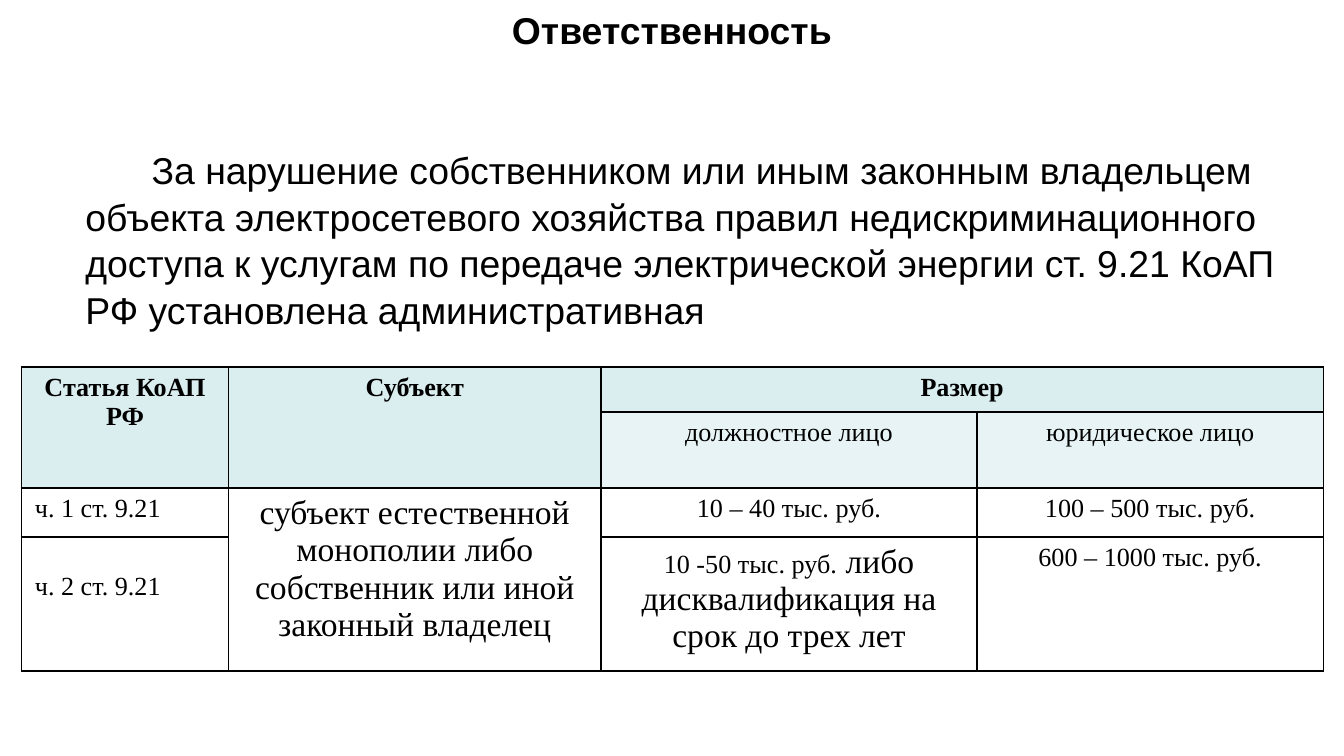
from lxml.etree import SubElement
from pptx import Presentation
from pptx.dml.color import RGBColor as RGB
from pptx.enum.text import MSO_ANCHOR, MSO_AUTO_SIZE, PP_ALIGN
from pptx.oxml.ns import qn
from pptx.util import Pt

TITLE = "Ответственность"
BODY = ("За нарушение собственником или иным законным владельцем объекта "
        "электросетевого хозяйства правил недискриминационного доступа к услугам "
        "по передаче электрической энергии ст. 9.21 КоАП РФ установлена "
        "административная")

THEME = {"sans": "Arial", "serif": "Times New Roman", "ink": "000000",
         "head": "DAEDEF", "subhead": "E7F3F4", "cell": "FFFFFF",
         "text": 20, "large": 18, "small": 14, "border": 1}

COLUMNS = [111, 199.5, 201.5, 185.5]
ROWS = [24, 40.8, 26.2, 72]
ROW_FILLS = ["head", "subhead", "cell", "cell"]
# Each cell is a list of (text, size) runs; None is covered by a merged cell.
CELLS = [
    [[("Статья КоАП РФ", "small")], [("Субъект", "small")], [("Размер", "small")], None],
    [None, None, [("должностное лицо", "small")], [("юридическое лицо", "small")]],
    [[("ч. 1 ст. 9.21", "small")],
     [("субъект естественной монополии либо собственник или иной законный владелец",
       "large")],
     [("10 – 40 тыс. руб.", "small")], [("100 – 500 тыс. руб.", "small")]],
    [[("ч. 2 ст. 9.21", "small")], None,
     [("10 -50 тыс. руб.", "small"),
      (" либо дисквалификация на срок до трех лет", "large")],
     [("600 – 1000 тыс. руб.", "small")]],
]
MERGES = [((0, 0), (1, 0)), ((0, 1), (1, 1)), ((0, 2), (0, 3)), ((2, 1), (3, 1))]
LOWERED_CELL, LOWERED_MARGIN = (3, 0), 19


def add_run(p, text, font, size, bold=False):
    r = p.add_run()
    r.text = text
    r.font.name, r.font.size, r.font.bold = THEME[font], Pt(THEME[size]), bold
    r.font.color.rgb = RGB.from_string(THEME["ink"])


def place(sp, left, top, width, height, inset_top):
    """Position a placeholder and return its text frame, anchored at the top."""
    sp.left, sp.top, sp.width, sp.height = map(Pt, (left, top, width, height))
    tf = sp.text_frame
    tf.word_wrap, tf.auto_size = True, MSO_AUTO_SIZE.NONE
    tf.vertical_anchor = MSO_ANCHOR.TOP
    tf.margin_top = Pt(inset_top)
    return tf


def add_borders(cell):
    tc_pr = cell._tc.get_or_add_tcPr()
    for side in ("lnL", "lnR", "lnT", "lnB"):
        ln = SubElement(tc_pr, qn("a:" + side), w=str(Pt(THEME["border"])))
        fill = SubElement(ln, qn("a:solidFill"))
        SubElement(fill, qn("a:srgbClr"), val=THEME["ink"])


def add_penalty_table(slide):
    table = slide.shapes.add_table(len(ROWS), len(COLUMNS), Pt(11.5), Pt(196.6),
                                   Pt(sum(COLUMNS)), Pt(sum(ROWS))).table
    for column, width in zip(table.columns, COLUMNS):
        column.width = Pt(width)
    for row, height in zip(table.rows, ROWS):
        row.height = Pt(height)
    for first, last in MERGES:
        table.cell(*first).merge(table.cell(*last))
    for i, row in enumerate(CELLS):
        for j, runs in enumerate(row):
            cell = table.cell(i, j)
            add_borders(cell)
            cell.fill.solid()
            cell.fill.fore_color.rgb = RGB.from_string(THEME[ROW_FILLS[i]])
            if runs is None:
                continue
            p = cell.text_frame.paragraphs[0]
            left_aligned = j == 0 and i > 0
            p.alignment = PP_ALIGN.LEFT if left_aligned else PP_ALIGN.CENTER
            for text, size in runs:
                add_run(p, text, "serif", size, bold=i == 0)
    table.cell(*LOWERED_CELL).margin_top = Pt(LOWERED_MARGIN)


def main():
    prs = Presentation()
    prs.slide_width, prs.slide_height = Pt(720), Pt(405)
    slide = prs.slides.add_slide(prs.slide_layouts[1])

    p = place(slide.shapes.title, 0, 0, 720, 32, 3.6).paragraphs[0]
    p.alignment = PP_ALIGN.CENTER
    add_run(p, TITLE, "sans", "text", bold=True)

    p = place(slide.placeholders[1], 11.5, 56, 698, 130, 22).paragraphs[0]
    p_pr = p._p.get_or_add_pPr()
    p_pr.set("marL", str(Pt(27)))
    p_pr.set("indent", str(Pt(35.5)))
    SubElement(p_pr, qn("a:buNone"))
    p.alignment, p.line_spacing, p.space_before = PP_ALIGN.LEFT, 1.04, Pt(0)
    add_run(p, BODY, "sans", "text")

    add_penalty_table(slide)
    prs.save("out.pptx")


if __name__ == "__main__":
    main()
